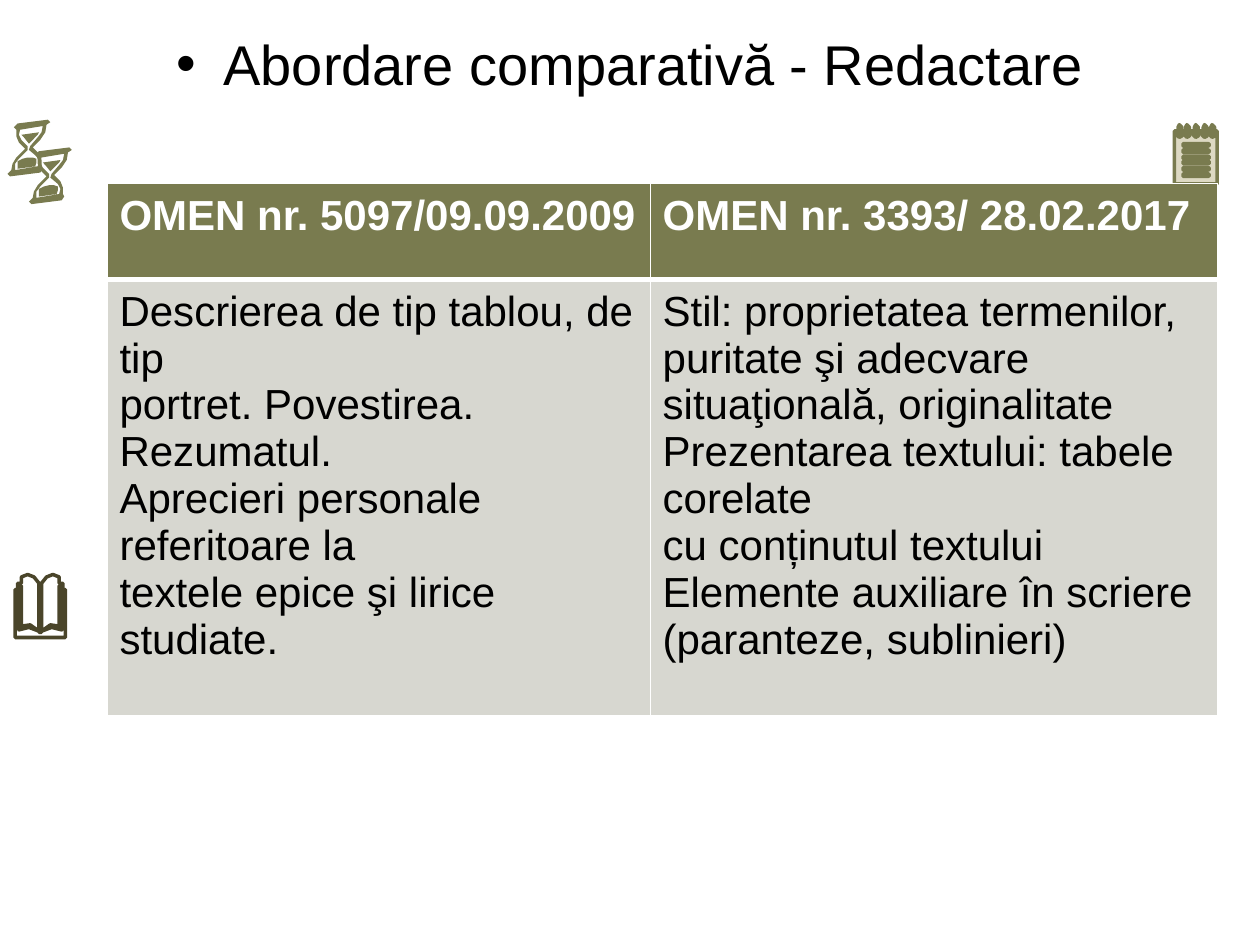
from lxml import etree
from pptx import Presentation
from pptx import util as u
from pptx.dml.color import RGBColor
from pptx.enum import text
from pptx.oxml.ns import qn

OLIVE, SAND, BROWN, WHITE, BLACK = "797B4F", "DDD9C3", "4A452A", "FFFFFF", "000000"


def tint(part, code):
    """Colour a fill (made solid) or a font colour."""
    if hasattr(part, "solid"):
        part.solid()
        part = part.fore_color
    part.rgb = RGBColor.from_string(code)


def icon(loops, fill, line=None):
    """Draw closed loops, with points in hundredths of an inch."""
    pen = slide.shapes.build_freeform(*loops[0][0], scale=u.Cm(0.0254))
    for n, loop in enumerate(loops):
        if n:
            pen.move_to(*loop[0])
        pen.add_line_segments(loop[1:], close=True)
    shape = pen.convert_to_shape()
    shape.shadow.inherit = False
    tint(shape.fill, fill)
    if line:
        tint(shape.line.fill, line)
        shape.line.width = u.Pt(2)
    else:
        shape.line.fill.background()


prs = Presentation()
prs.slide_width, prs.slide_height = u.Cm(25.4), u.Cm(19.05)
slide = prs.slides.add_slide(prs.slide_layouts[5])

# Title with a bullet
title = slide.shapes.title
spot = {"left": 0, "top": 0.46, "width": 25.4, "height": 2.13}
for key, val in spot.items():
    setattr(title, key, u.Cm(val))
frame = title.text_frame
frame.text = "Abordare comparativă - Redactare"
look = {"vertical_anchor": text.MSO_ANCHOR.TOP, "word_wrap": True,
        "auto_size": text.MSO_AUTO_SIZE.NONE}
for key, val in look.items():
    setattr(frame, key, val)
para = frame.paragraphs[0]
para.alignment = text.PP_ALIGN.CENTER
para.space_before = u.Pt(3)
props = para._p.get_or_add_pPr()
props.set("marL", str(u.Cm(0.95)))
props.set("indent", str(u.Cm(-0.95)))
etree.SubElement(props, qn("a:buFont")).set("typeface", "Arial")
etree.SubElement(props, qn("a:buChar")).set("char", "•")
font = para.runs[0].font
font.name, font.size = "Arial", u.Pt(32)
tint(font.color, BLACK)

# Two hourglasses: sand below, sand above, glass, frame
glass = [
    [(14, 134), (14, 128), (18, 126), (22, 125), (26, 125), (29, 126), (29, 129), (28, 132)],
    [(17, 107), (31, 105), (30, 107), (23, 114), (19, 109)],
    [(16, 103), (15, 107), (17, 111), (22, 116), (22, 119), (15, 126), (12, 130), (12, 135),
     (30, 132), (31, 128), (29, 124), (23, 119), (24, 116), (30, 109), (33, 105), (34, 100)],
    [(14, 98), (38, 95), (40, 97), (37, 99), (36, 105), (32, 111), (26, 117), (31, 122),
     (33, 127), (33, 132), (34, 134), (32, 137), (8, 140), (6, 138), (9, 135), (10, 130),
     (13, 125), (20, 118), (15, 113), (13, 108), (13, 103), (11, 101)],
]
for dx, dy in [(0, 0), (17, 22)]:
    icon([[(x + dx, y + dy) for x, y in loop] for loop in glass], OLIVE)

# Notepad: body notched at each ring, rings, ruled lines
rings = [round(934 + 6.5 * i) for i in range(5)]
body = [(932, 104)]
for x in rings:
    body += [(x, 104), (x, 107), (x + 2, 109), (x + 4, 108), (x + 5, 104)]
body += [(966, 104), (966, 146), (932, 146)]
pad = [body]
for x in rings:
    pad.append([(x + 1, 101), (x + 2, 99), (x + 4, 101), (x + 4, 106), (x + 2, 108), (x + 1, 106)])
for i in range(6):
    y = round(114 + 4.75 * i)
    pad.append([(939, y), (959, y), (960, y + 1), (959, y + 2), (939, y + 2)])
icon(pad, SAND, OLIVE)

# Open book
book = [(31, 502), (33, 502), (33, 501), (41, 498), (49, 500), (49, 465), (47, 465), (47, 497),
        (40, 496), (33, 501), (33, 463), (37, 458), (42, 456), (47, 458), (47, 463), (50, 463),
        (50, 468), (52, 468), (52, 506), (12, 506), (12, 468), (14, 468), (14, 463), (17, 463),
        (17, 458), (22, 456), (27, 458), (31, 463), (31, 501), (24, 496), (17, 497), (17, 465),
        (15, 465), (15, 500), (23, 498), (31, 501)]
icon([book], WHITE, BROWN)

# Comparison table
rows = [
    (["OMEN nr. 5097/09.09.2009"], ["OMEN nr. 3393/ 28.02.2017"]),
    (["Descrierea de tip tablou, de tip", "portret. Povestirea.", "Rezumatul.",
      "Aprecieri personale referitoare la", "textele epice şi lirice studiate."],
     ["Stil: proprietatea termenilor, puritate şi adecvare situaţională, originalitate",
      "Prezentarea textului: tabele corelate", "cu conținutul textului",
      "Elemente auxiliare în scriere", "(paranteze, sublinieri)"]),
]
table = slide.shapes.add_table(2, 2, u.Cm(2.16), u.Cm(3.7), u.Cm(22.38), u.Cm(10.72)).table
for col, wide in zip(table.columns, (10.95, 11.43)):
    col.width = u.Cm(wide)
for row, high in zip(table.rows, (1.93, 8.79)):
    row.height = u.Cm(high)
pads = {"margin_left": 0.25, "margin_right": 0.25, "margin_top": 0.18, "margin_bottom": 0.18}
for r, row in enumerate(rows):
    head = r == 0
    for c, lines in enumerate(row):
        cell = table.cell(r, c)
        for key, val in pads.items():
            setattr(cell, key, u.Cm(val))
        tc = cell._tc.get_or_add_tcPr()
        for side in "LRTB":
            wide = 3 if (r, side) in [(0, "B"), (1, "T")] else 1
            edge = etree.SubElement(tc, qn("a:ln" + side), w=str(u.Pt(wide)))
            solid = etree.SubElement(edge, qn("a:solidFill"))
            etree.SubElement(solid, qn("a:srgbClr"), val=WHITE)
        tint(cell.fill, OLIVE if head else "D7D7D0")
        cell.text_frame.text = "\n".join(lines)
        for para in cell.text_frame.paragraphs:
            font = para.runs[0].font
            for key, val in {"name": "Arial", "size": u.Pt(24), "bold": head}.items():
                setattr(font, key, val)
            tint(font.color, WHITE if head else BLACK)

prs.save("out.pptx")
